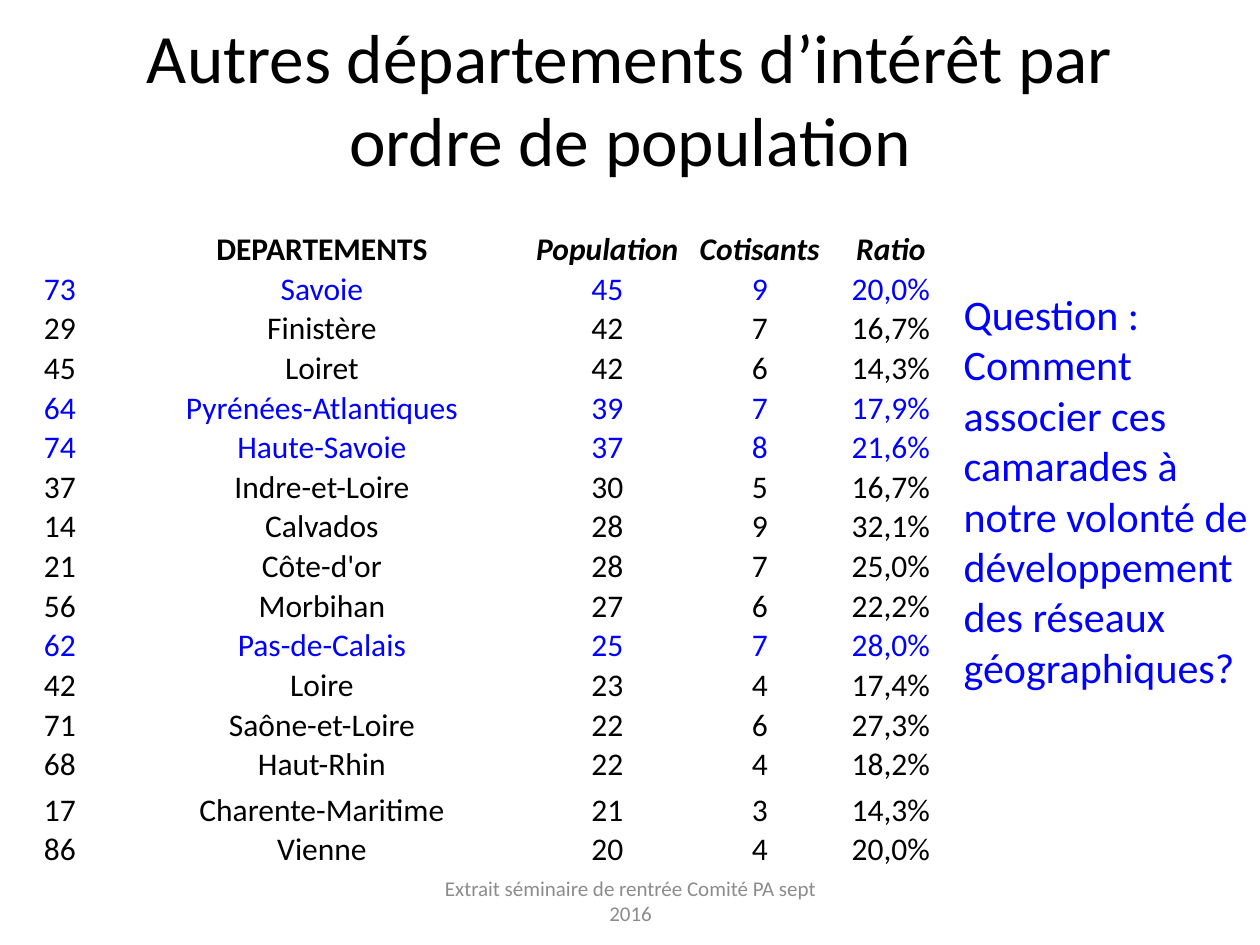
from pptx import Presentation
from pptx.dml.color import RGBColor
from pptx.enum.text import MSO_ANCHOR, MSO_AUTO_SIZE, PP_ALIGN
from pptx.util import Inches, Pt

FONT = "Calibri"
BLACK, BLUE, GREY = "000000", "0000FF", "8C8C8C"

HEADERS = ["", "DEPARTEMENTS", "Population", "Cotisants", "Ratio"]
DEPARTMENTS = [
    ("73", "Savoie", "45", "9", "20,0%"),
    ("29", "Finistère", "42", "7", "16,7%"),
    ("45", "Loiret", "42", "6", "14,3%"),
    ("64", "Pyrénées-Atlantiques", "39", "7", "17,9%"),
    ("74", "Haute-Savoie", "37", "8", "21,6%"),
    ("37", "Indre-et-Loire", "30", "5", "16,7%"),
    ("14", "Calvados", "28", "9", "32,1%"),
    ("21", "Côte-d'or", "28", "7", "25,0%"),
    ("56", "Morbihan", "27", "6", "22,2%"),
    ("62", "Pas-de-Calais", "25", "7", "28,0%"),
    ("42", "Loire", "23", "4", "17,4%"),
    ("71", "Saône-et-Loire", "22", "6", "27,3%"),
    ("68", "Haut-Rhin", "22", "4", "18,2%"),
    ("17", "Charente-Maritime", "21", "3", "14,3%"),
    ("86", "Vienne", "20", "4", "20,0%"),
]
HIGHLIGHTED = {"73", "64", "74", "62"}
TALL_ROW = "17"
TALL_HEIGHT = 0.36
COLUMN_WIDTHS = [1.01, 3.15, 1.38, 1.04, 1.04]


def color(value):
    return RGBColor.from_string(value)


def format_paragraph(paragraph, size, hex_color, alignment=PP_ALIGN.LEFT, bold=False, italic=False):
    paragraph.alignment = alignment
    font = paragraph.font
    font.name = FONT
    font.size = Pt(size)
    font.bold = bold
    font.italic = italic
    font.color.rgb = color(hex_color)


def place_title(slide, left, top, width, height):
    title = slide.shapes.title
    title.left, title.top = Inches(left), Inches(top)
    title.width, title.height = Inches(width), Inches(height)
    frame = title.text_frame
    frame.text = "Autres départements d’intérêt par ordre de population"
    frame.auto_size = MSO_AUTO_SIZE.NONE
    frame.vertical_anchor = MSO_ANCHOR.MIDDLE
    format_paragraph(frame.paragraphs[0], 39.6, BLACK, PP_ALIGN.CENTER)


def fill_cell(cell, text, hex_color, bold, italic):
    cell.fill.background()
    cell.margin_left = cell.margin_right = cell.margin_top = cell.margin_bottom = 0
    cell.vertical_anchor = MSO_ANCHOR.BOTTOM
    cell.text = text
    format_paragraph(cell.text_frame.paragraphs[0], 18, hex_color, PP_ALIGN.CENTER, bold, italic)


def add_department_table(slide, left, top, width, height):
    rows = [HEADERS, *DEPARTMENTS]
    table = slide.shapes.add_table(
        len(rows), len(HEADERS), Inches(left), Inches(top), Inches(width), Inches(height)
    ).table
    table.first_row = table.horz_banding = False
    for column, column_width in zip(table.columns, COLUMN_WIDTHS):
        column.width = Inches(column_width)
    row_height = (height - TALL_HEIGHT) / (len(rows) - 1)
    for row_index, values in enumerate(rows):
        is_header = row_index == 0
        code = values[0]
        table.rows[row_index].height = Inches(TALL_HEIGHT if code == TALL_ROW else row_height)
        hex_color = BLUE if code in HIGHLIGHTED else BLACK
        for column_index, text in enumerate(values):
            fill_cell(table.cell(row_index, column_index), text, hex_color,
                      is_header, is_header and column_index > 1)


def add_text(slide, left, top, width, height, lines):
    box = slide.shapes.add_textbox(Inches(left), Inches(top), Inches(width), Inches(height))
    frame = box.text_frame
    frame.word_wrap = True
    frame.text = "\n".join(lines)
    return frame


def add_question(slide, left, top, width, height):
    frame = add_text(slide, left, top, width, height, [
        "Question :",
        "Comment associer ces camarades à notre volonté de développement des réseaux géographiques?",
    ])
    frame.auto_size = MSO_AUTO_SIZE.SHAPE_TO_FIT_TEXT
    for paragraph in frame.paragraphs:
        format_paragraph(paragraph, 24, BLUE)


def add_footer(slide, left, top, width, height):
    frame = add_text(slide, left, top, width, height,
                     ["Extrait séminaire de rentrée Comité PA sept 2016"])
    frame.vertical_anchor = MSO_ANCHOR.MIDDLE
    format_paragraph(frame.paragraphs[0], 12, GREY, PP_ALIGN.CENTER)


def main():
    presentation = Presentation()
    presentation.slide_width, presentation.slide_height = Inches(10), Inches(7.5)
    slide = presentation.slides.add_slide(presentation.slide_layouts[5])
    place_title(slide, 0.5, 0.15, 9, 1.25)
    add_department_table(slide, -0.03, 1.82, 7.62, 5.08)
    add_question(slide, 7.55, 2.24, 2.45, 3.74)
    add_footer(slide, 3.42, 6.95, 3.17, 0.4)
    presentation.save("out.pptx")


if __name__ == "__main__":
    main()
